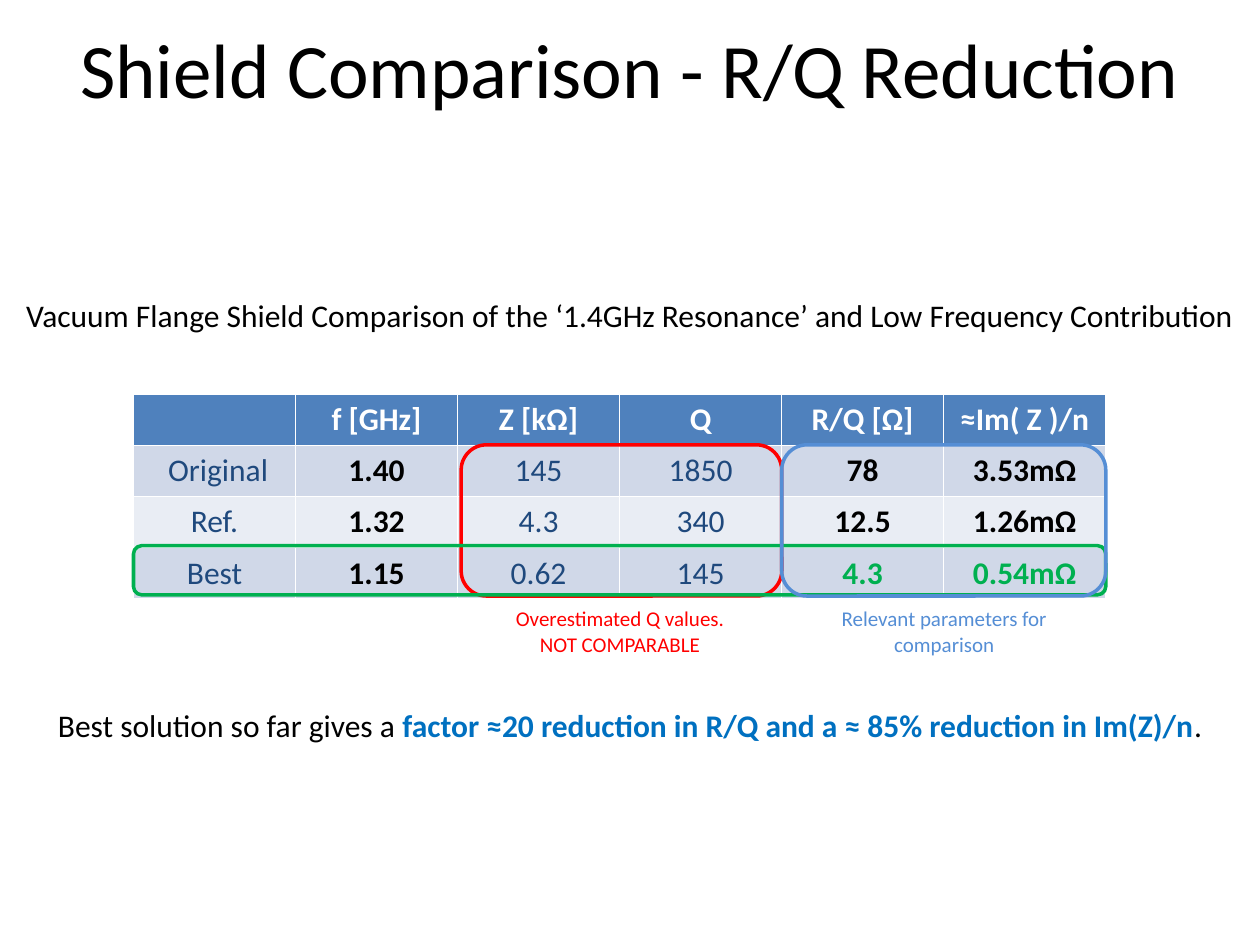
from dataclasses import dataclass

from pptx import Presentation
from pptx.dml.color import RGBColor
from pptx.enum.shapes import MSO_AUTO_SHAPE_TYPE as ShapeType
from pptx.enum.text import MSO_ANCHOR as Anchor, MSO_AUTO_SIZE as AutoSize, PP_ALIGN as Align
from pptx.util import Pt


@dataclass(frozen=True)
class Theme:
    font: str = "Calibri"
    title_size: int = 44
    body_size: int = 18
    note_size: int = 12
    black: str = "000000"
    white: str = "FFFFFF"
    navy: str = "1F497D"
    red: str = "FF0000"
    green: str = "00B050"
    blue: str = "558ED5"
    strong: str = "0070C0"
    header_fill: str = "4F81BD"
    band_fills: tuple = ("D0D8E8", "E9EDF4")


THEME = Theme()

# Content
TITLE = "Shield Comparison - R/Q Reduction"
CAPTION = "Vacuum Flange Shield Comparison of the ‘1.4GHz Resonance’ and Low Frequency Contribution"
ROWS = [
    ["", "f [GHz]", "Z [kΩ]", "Q", "R/Q [Ω]", "≈Im( Z )/n"],
    [" Original", "1.40", "145", "1850", "78", "3.53mΩ"],
    ["Ref.", "1.32", "4.3", "340", "12.5", "1.26mΩ"],
    ["Best", "1.15", "0.62", "145", "4.3", "0.54mΩ"],
]
KEY_COLUMNS = (1, 4, 5)
RESULT_COLUMNS = (4, 5)
CONCLUSION = [
    ("Best solution so far gives a ", THEME.black, False),
    ("factor ≈20 reduction in R/Q and a ≈ 85% reduction in Im(Z)/n", THEME.strong, True),
    (".", THEME.black, False),
]

# Layout, in points
SLIDE_WIDTH, SLIDE_HEIGHT = 720, 540
TABLE_LEFT, TABLE_TOP = 76.3, 225.4
COLUMN_WIDTH, ROW_HEIGHT, ROW_STEP = 92.6, 28.1, 28.8
NOTE_TOP = 342.7

# Frames: color, first column, column count, first row, height, left inset
FRAMES = [
    (THEME.red, 2, 2, 1, 3 * ROW_STEP, 2),
    (THEME.green, 0, 6, 3, ROW_HEIGHT, 0),
    (THEME.blue, 4, 2, 1, 3 * ROW_STEP, 0),
]
# Notes: text, color, left, width, wrap
NOTES = [
    ("Overestimated Q values.\nNOT COMPARABLE", THEME.red, 286.6, 135.4, False),
    ("Relevant parameters for comparison", THEME.blue, 450.7, 177.8, True),
]


def format_run(run, size, color, bold=False):
    run.font.name = THEME.font
    run.font.size = Pt(size)
    run.font.bold = bold
    run.font.color.rgb = RGBColor.from_string(color)


def format_text(text_frame, size, color, bold=False):
    for paragraph in text_frame.paragraphs:
        paragraph.alignment = Align.CENTER
        for run in paragraph.runs:
            format_run(run, size, color, bold)


def add_text_box(slide, left, top, width, height, wrap=True):
    text_frame = slide.shapes.add_textbox(Pt(left), Pt(top), Pt(width), Pt(height)).text_frame
    text_frame.word_wrap = wrap
    text_frame.auto_size = AutoSize.SHAPE_TO_FIT_TEXT
    return text_frame


def cell_style(row, column):
    """Return fill, text color and bold for a table cell."""
    if row == 0:
        return THEME.header_fill, THEME.white, True
    fill = THEME.band_fills[(row - 1) % 2]
    if column not in KEY_COLUMNS:
        return fill, THEME.navy, False
    is_best = row == len(ROWS) - 1 and column in RESULT_COLUMNS
    return fill, THEME.green if is_best else THEME.black, True


def add_results_table(slide):
    row_count, column_count = len(ROWS), len(ROWS[0])
    table = slide.shapes.add_table(
        row_count, column_count, Pt(TABLE_LEFT), Pt(TABLE_TOP),
        Pt(column_count * COLUMN_WIDTH), Pt(row_count * ROW_HEIGHT)).table
    for column in table.columns:
        column.width = Pt(COLUMN_WIDTH)
    for row_index, values in enumerate(ROWS):
        table.rows[row_index].height = Pt(ROW_HEIGHT)
        for column_index, value in enumerate(values):
            fill, color, bold = cell_style(row_index, column_index)
            cell = table.cell(row_index, column_index)
            cell.fill.solid()
            cell.fill.fore_color.rgb = RGBColor.from_string(fill)
            cell.text_frame.text = value
            format_text(cell.text_frame, THEME.body_size, color, bold)


def add_frame(slide, color, column, column_count, row, height, inset):
    shape = slide.shapes.add_shape(
        ShapeType.ROUNDED_RECTANGLE,
        Pt(TABLE_LEFT + column * COLUMN_WIDTH + inset), Pt(TABLE_TOP + row * ROW_STEP),
        Pt(column_count * COLUMN_WIDTH - inset), Pt(height))
    shape.shadow.inherit = False
    shape.fill.background()
    shape.line.color.rgb = RGBColor.from_string(color)
    shape.line.width = Pt(2)


def main():
    presentation = Presentation()
    presentation.slide_width, presentation.slide_height = Pt(SLIDE_WIDTH), Pt(SLIDE_HEIGHT)
    slide = presentation.slides.add_slide(presentation.slide_layouts[5])

    # Title
    title = slide.shapes.title
    title.left, title.top, title.width, title.height = Pt(0), Pt(0), Pt(SLIDE_WIDTH), Pt(77)
    title.text_frame.text = TITLE
    title.text_frame.vertical_anchor = Anchor.MIDDLE
    format_text(title.text_frame, THEME.title_size, THEME.black)

    # Table and its caption
    add_results_table(slide)
    caption = add_text_box(slide, 0, 165.6, SLIDE_WIDTH, 29)
    caption.text = CAPTION
    format_text(caption, THEME.body_size, THEME.black)

    # Frames around table areas, with notes below
    for frame in FRAMES:
        add_frame(slide, *frame)
    for text, color, left, width, wrap in NOTES:
        note = add_text_box(slide, left, NOTE_TOP, width, 36, wrap)
        note.text = text
        format_text(note, THEME.note_size, color)

    # Conclusion
    paragraph = add_text_box(slide, 0, 399.6, SLIDE_WIDTH, 29).paragraphs[0]
    paragraph.alignment = Align.CENTER
    for text, color, bold in CONCLUSION:
        run = paragraph.add_run()
        run.text = text
        format_run(run, THEME.body_size, color, bold)

    presentation.save("out.pptx")


if __name__ == "__main__":
    main()
